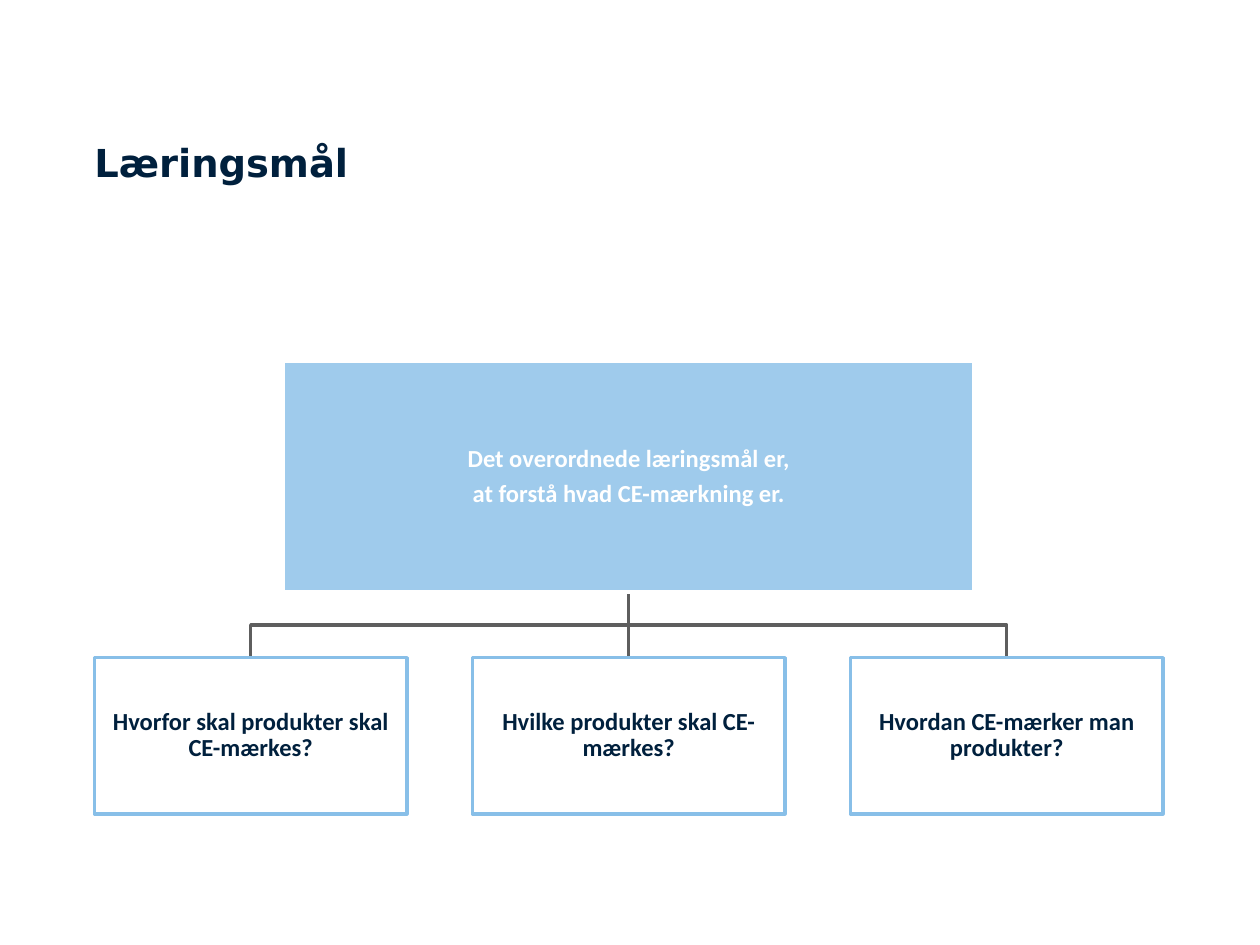
from lxml.etree import SubElement
from pptx import Presentation
from pptx.dml.color import RGBColor
from pptx.enum.shapes import MSO_CONNECTOR, MSO_SHAPE
from pptx.enum.text import MSO_ANCHOR, PP_ALIGN
from pptx.oxml.ns import qn
from pptx.util import Inches, Pt

NAVY = RGBColor(0x00, 0x20, 0x3D)
SKY = RGBColor(0x88, 0xBF, 0xE8)
GREY = RGBColor(0x5E, 0x5E, 0x5E)
WHITE = RGBColor(0xFF, 0xFF, 0xFF)

GOAL = ["Det overordnede læringsmål er,", "at forstå hvad CE-mærkning er."]
QUESTIONS = [
    "Hvorfor skal produkter skal CE-mærkes?",
    "Hvilke produkter skal CE-mærkes?",
    "Hvordan CE-mærker man produkter?",
]


def set_margins(frame, margin):
    """Give a text frame the same margin on all sides and let it wrap."""
    frame.word_wrap = True
    frame.margin_left = frame.margin_right = margin
    frame.margin_top = frame.margin_bottom = margin


def style_font(font, name, size, color):
    """Set a bold font."""
    font.name, font.size, font.bold = name, Pt(size), True
    font.color.rgb = color


def style_line(line, color):
    """Set a two-point line in the given colour."""
    line.color.rgb = color
    line.width = Pt(2)


def add_title(page, text, left, top, width, height):
    """Place the slide title at the top of its box."""
    frame = page.shapes.add_textbox(left, top, width, height).text_frame
    set_margins(frame, 0)
    frame.text = text
    style_font(frame.paragraphs[0].runs[0].font, "DejaVu Sans", 22, NAVY)


def add_node(page, lines, left, top, width, height, fill, opacity, border, color):
    """Place one translucent box of the tree with its centred text."""
    node = page.shapes.add_shape(MSO_SHAPE.RECTANGLE, left, top, width, height)
    node.shadow.inherit = False
    node.fill.solid()
    node.fill.fore_color.rgb = fill
    fill_color = node.fill._xPr.find(qn("a:solidFill"))[0]
    SubElement(fill_color, qn("a:alpha")).set("val", str(opacity * 1000))
    style_line(node.line, border)
    frame = node.text_frame
    set_margins(frame, Inches(0.01))
    frame.vertical_anchor = MSO_ANCHOR.MIDDLE
    frame.text = "\n".join(lines)
    for para in frame.paragraphs:
        para.alignment = PP_ALIGN.CENTER
        para.line_spacing = 0.9
        para.space_after = Pt(5)
        style_font(para.runs[0].font, "Calibri", 14, color)


def add_branch(page, start_x, start_y, end_x, end_y):
    """Join two points with a straight line or a stepped one."""
    if start_x == end_x:
        branch = page.shapes.add_connector(
            MSO_CONNECTOR.STRAIGHT, start_x, start_y, end_x, end_y)
        SubElement(branch._element.spPr, qn("a:effectLst"))
    else:
        middle = (start_y + end_y) // 2
        builder = page.shapes.build_freeform(start_x, start_y)
        builder.add_line_segments(
            [(start_x, middle), (end_x, middle), (end_x, end_y)], close=False)
        branch = builder.convert_to_shape()
        branch.shadow.inherit = False
        branch.fill.background()
    style_line(branch.line, GREY)


def add_tree(page, left, top, width, height):
    """Place the goal above a row of questions joined to it."""
    goal_width, goal_height = Inches(5.48), Inches(1.83)
    child_width, child_height = Inches(2.48), Inches(1.24)
    center = left + width // 2
    child_top = top + height - child_height
    step = (width - child_width) // (len(QUESTIONS) - 1)
    lefts = [left + index * step for index in range(len(QUESTIONS))]
    for child_left in lefts:
        add_branch(page, center, top + goal_height,
                   child_left + child_width // 2, child_top)
    add_node(page, GOAL, center - goal_width // 2, top, goal_width, goal_height,
             SKY, 80, WHITE, WHITE)
    for child_left, question in zip(lefts, QUESTIONS):
        add_node(page, [question], child_left, child_top, child_width,
                 child_height, WHITE, 70, SKY, NAVY)


def main():
    """Build and save the slide."""
    deck = Presentation()
    deck.slide_width, deck.slide_height = Inches(10), Inches(7.5)
    page = deck.slides.add_slide(deck.slide_layouts[6])
    add_title(page, "Læringsmål", Inches(0.75), Inches(1.1), Inches(8.47), Inches(0.81))
    add_tree(page, Inches(0.75), Inches(2.87), Inches(8.48), Inches(3.59))
    deck.save("out.pptx")


if __name__ == "__main__":
    main()
